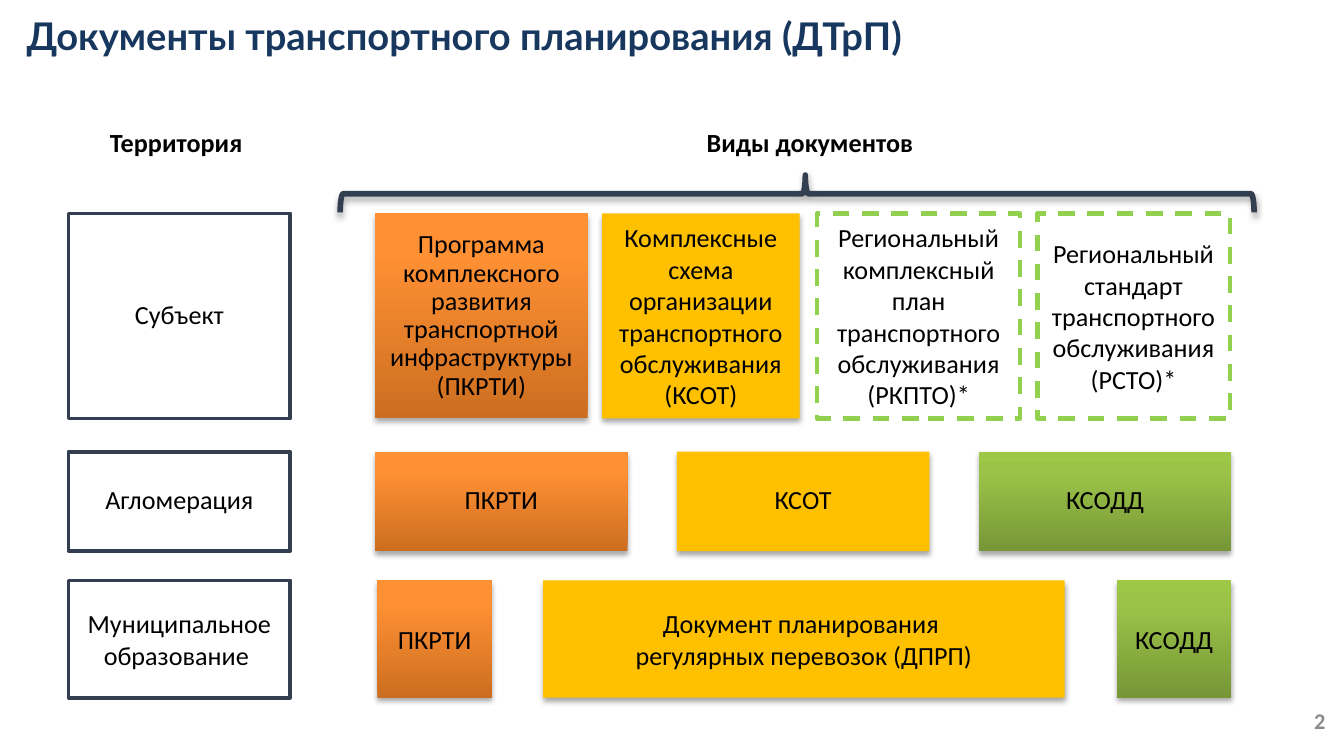
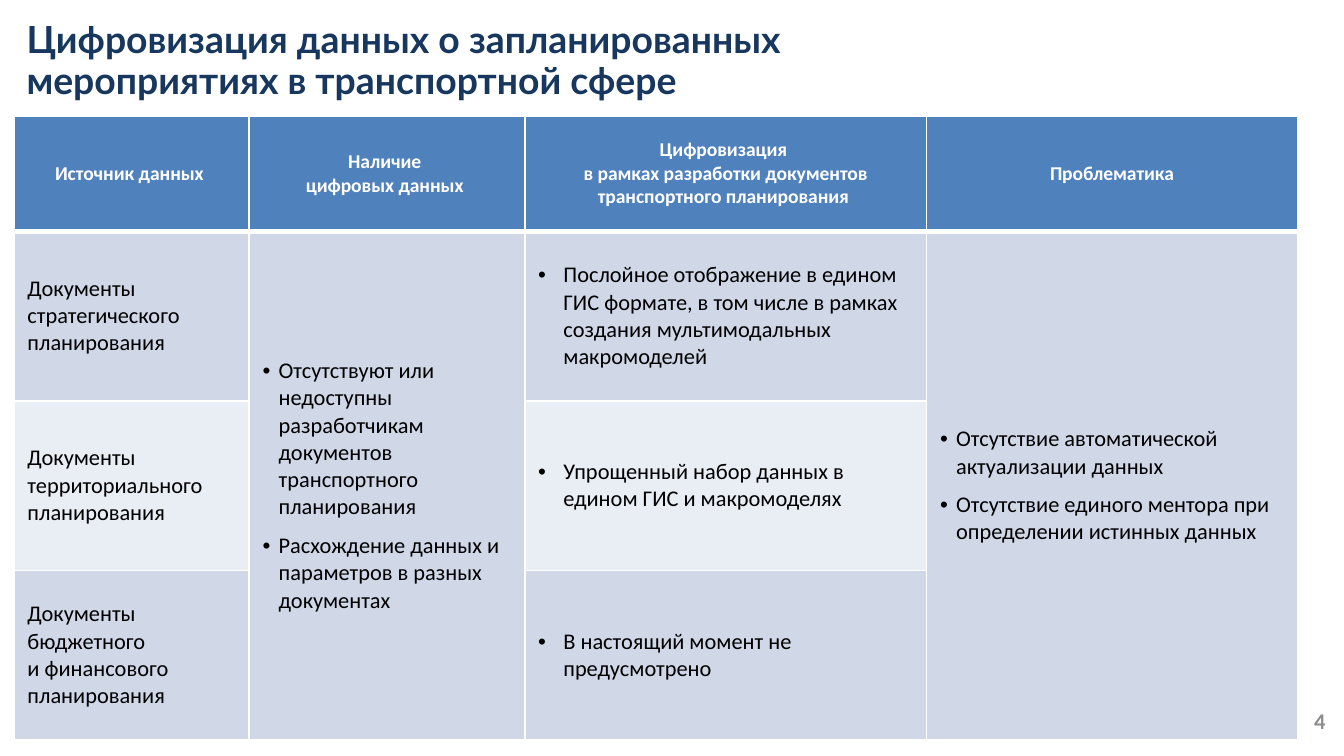
"""Builds two slides on transport planning documents and their digital data."""
from copy import deepcopy
from dataclasses import dataclass
from typing import Optional

from lxml import etree
from pptx import Presentation
from pptx.dml.color import RGBColor
from pptx.enum.dml import MSO_LINE
from pptx.enum.shapes import MSO_SHAPE
from pptx.enum.text import MSO_ANCHOR, PP_ALIGN
from pptx.oxml.ns import qn
from pptx.util import Pt

LEFT, CENTER, RIGHT = PP_ALIGN.LEFT, PP_ALIGN.CENTER, PP_ALIGN.RIGHT
TOP, MIDDLE = MSO_ANCHOR.TOP, MSO_ANCHOR.MIDDLE
RECT, BRACE = MSO_SHAPE.RECTANGLE, MSO_SHAPE.LEFT_BRACE
DASH = MSO_LINE.DASH

BLACK, WHITE, NAVY, SLATE = "000000", "FFFFFF", "17375E", "333F50"
GREY, HEAD, DARK, LIGHT = "8C8C8C", "4F81BD", "D0D8E8", "E9EDF4"
STOPS = (0, 0.8, 1)


@dataclass(frozen=True)
class Style:
    fills: tuple[str, ...]
    line: Optional[str] = None
    width: float = 0
    dash: bool = False
    shadow: bool = False


@dataclass(frozen=True)
class Box:
    text: str
    left: float
    width: float
    style: Style
    spacing: float = 1


@dataclass(frozen=True)
class Row:
    top: float
    height: float
    boxes: tuple[Box, ...]


@dataclass(frozen=True)
class Cell:
    row: int
    col: int
    texts: tuple[str, ...]
    indent: float = 0
    span: int = 1


PLACE = Style((WHITE,), SLATE, 2)
ORANGE = Style(("CC6E20", "FF9034", "FF9136"), shadow=True)
GREEN = Style(("779737", "9BC348", "9DC746"), shadow=True)
YELLOW = Style(("FFC000",), shadow=True)
DRAFT = Style((WHITE,), "92D050", 2.25, dash=True)


def place(text: str, spacing: float = 0.9) -> Box:
    return Box(text, 36.7, 118.8, PLACE, spacing)


MIDDLES = (("ПКРТИ", ORANGE), ("КСОТ", YELLOW), ("КСОДД", GREEN))
ROWS = (
    Row(114.4, 109.8, (
        place("Субъект"),
        Box("Программа комплексного развития транспортной инфраструктуры (ПКРТИ)",
            201, 113.8, ORANGE, 0.9),
        Box("Комплексные схема организации транспортного обслуживания (КСОТ)",
            322.6, 105.8, YELLOW),
        Box("Региональный комплексный план транспортного обслуживания (РКПТО)*",
            437.8, 108.7, DRAFT),
        Box("Региональный стандарт транспортного обслуживания (РСТО)*",
            555.8, 103, DRAFT),
    )),
    Row(242, 53.3, (
        place("Агломерация"),
        *(Box(text, 201 + 161.7 * i, 135.2, style, 0.9)
          for i, (text, style) in enumerate(MIDDLES)),
    )),
    Row(311, 62.8, (
        place("Муниципальное образование ", 1),
        Box("ПКРТИ", 202.2, 61.4, ORANGE),
        Box("Документ планирования \nрегулярных перевозок (ДПРП)", 291, 279.4, YELLOW),
        Box("КСОДД", 598.3, 61.4, GREEN),
    )),
)

COLS = (126, 147.6, 215.3, 198.7)
HEIGHTS = (61.9, 90.9, 90.9, 90.9)
HEADS = (
    "Источник данных ",
    "Наличие \nцифровых данных ",
    "Цифровизация \nв рамках разработки документов транспортного планирования ",
    "Проблематика",
)
CELLS = (
    Cell(1, 0, ("Документы стратегического планирования",)),
    Cell(2, 0, ("Документы территориального планирования",)),
    Cell(3, 0, ("Документы бюджетного \nи финансового планирования",)),
    Cell(1, 1, ("Отсутствуют или недоступны разработчикам документов "
                "транспортного планирования",
                "Расхождение данных и параметров в разных документах"), 8.6, 3),
    Cell(1, 2, ("Послойное отображение в едином ГИС формате, в том числе "
                "в рамках создания мультимодальных макромоделей",), 13.5),
    Cell(2, 2, ("Упрощенный набор данных в едином ГИС и макромоделях",), 13.5),
    Cell(3, 2, ("В настоящий момент не предусмотрено",), 13.5),
    Cell(1, 3, ("Отсутствие автоматической актуализации данных",
                "Отсутствие единого ментора при определении истинных данных"), 8.6, 3),
)


def rgb(code: str) -> RGBColor:
    return RGBColor.from_string(code)


def write(frame, *texts: str, size: float = 14, color: str = BLACK,
          bold: bool = False, font: str = "Calibri", align=LEFT, anchor=TOP,
          spacing: float = 1, indent: float = 0) -> None:
    frame.word_wrap = True
    frame.vertical_anchor = anchor
    for i, text in enumerate(texts):
        para = frame.add_paragraph() if i else frame.paragraphs[0]
        para.text = text
        para.alignment = align
        para.line_spacing = spacing
        if indent:
            para.space_before = Pt(3 if i else 0)
            para.space_after = Pt(3)
            props = para._p.get_or_add_pPr()
            props.set("marL", str(Pt(indent)))
            props.set("indent", str(-Pt(indent)))
            etree.SubElement(props, qn("a:buFont")).set("typeface", "Arial")
            etree.SubElement(props, qn("a:buChar")).set("char", "•")
        for run in para.runs:
            run.font.name = font
            run.font.size = Pt(size)
            run.font.bold = bold
            run.font.color.rgb = rgb(color)
        for gap in para._p.findall(qn("a:br")):
            gap.append(deepcopy(para.runs[0]._r.rPr))


def label(slide, text: str, left: float, top: float, width: float,
          height: float, **look) -> None:
    box = slide.shapes.add_textbox(Pt(left), Pt(top), Pt(width), Pt(height))
    write(box.text_frame, text, **look)


def dress(shape, style: Style) -> None:
    fill = shape.fill
    if len(style.fills) > 1:
        fill.gradient()
        fill.gradient_angle = 90
        stops = shape.element.spPr.find(".//" + qn("a:gsLst"))
        stops.append(deepcopy(stops[0]))
        for stop, at, code in zip(fill.gradient_stops, STOPS, style.fills):
            stop.position = at
            stop.color.rgb = rgb(code)
    elif style.fills:
        fill.solid()
        fill.fore_color.rgb = rgb(style.fills[0])
    else:
        fill.background()
    if style.line:
        shape.line.color.rgb = rgb(style.line)
        shape.line.width = Pt(style.width)
        if style.dash:
            shape.line.dash_style = DASH
    else:
        shape.line.fill.background()
    shape.shadow.inherit = False
    if style.shadow:
        effects = shape.element.spPr.find(qn("a:effectLst"))
        outer = etree.SubElement(
            effects, qn("a:outerShdw"), blurRad=str(Pt(3.1)), dist=str(Pt(1.8)),
            dir="5400000", rotWithShape="0")
        tint = etree.SubElement(outer, qn("a:srgbClr"), val=BLACK)
        etree.SubElement(tint, qn("a:alpha"), val="35000")


def add_box(slide, box: Box, row: Row) -> None:
    shape = slide.shapes.add_shape(
        RECT, Pt(box.left), Pt(row.top), Pt(box.width), Pt(row.height))
    dress(shape, box.style)
    write(shape.text_frame, box.text, align=CENTER, anchor=MIDDLE,
          spacing=box.spacing)


def start(deck, title: str, number: int, size: float, spacing: float):
    slide = deck.slides.add_slide(deck.slide_layouts[5])
    head = slide.shapes.title
    head.left, head.top, head.width, head.height = Pt(7), Pt(8), Pt(530), Pt(38)
    write(head.text_frame, title, size=size, color=NAVY, bold=True, font="Lato",
          spacing=spacing)
    label(slide, str(number), 549.4, 375.4, 167.8, 21.6, size=12, color=GREY,
          bold=True, align=RIGHT, anchor=MIDDLE)
    return slide


def paint(cell, color: str, top: float = 1, bottom: float = 1) -> None:
    cell.fill.solid()
    cell.fill.fore_color.rgb = rgb(color)
    props = cell._tc.get_or_add_tcPr()
    sides = (("L", 1), ("R", 1), ("T", top), ("B", bottom))
    for i, (side, width) in enumerate(sides):
        line = etree.Element(qn("a:ln" + side), w=str(Pt(width)))
        fill = etree.SubElement(line, qn("a:solidFill"))
        etree.SubElement(fill, qn("a:srgbClr"), val=WHITE)
        props.insert(i, line)


def draw_types(deck) -> None:
    slide = start(deck, "Документы транспортного планирования (ДТрП)", 2, 20.4, 0.8)
    label(slide, "Территория", 51.8, 64.1, 94.3, 24.5, bold=True)
    label(slide, "Виды документов", 371.5, 64.1, 152.6, 24.5, bold=True)
    for row in ROWS:
        for box in row.boxes:
            add_box(slide, box, row)
    brace = slide.shapes.add_shape(BRACE, Pt(417), Pt(-141), Pt(20), Pt(489.6))
    brace.rotation = 90
    brace.adjustments[0] = 0.083
    brace.adjustments[1] = 0.491
    dress(brace, Style((), SLATE, 3, shadow=True))


def draw_data(deck) -> None:
    slide = start(deck, "Цифровизация данных о запланированных мероприятиях "
                        "в транспортной сфере", 4, 20, 0.9)
    grid = slide.shapes.add_table(
        len(HEIGHTS), len(COLS), Pt(7.5), Pt(62), Pt(sum(COLS)),
        Pt(sum(HEIGHTS))).table
    for col, width in zip(grid.columns, COLS):
        col.width = Pt(width)
    for row, height in zip(grid.rows, HEIGHTS):
        row.height = Pt(height)
    for i, text in enumerate(HEADS):
        cell = grid.cell(0, i)
        paint(cell, HEAD, bottom=3)
        cell.vertical_anchor = MIDDLE
        write(cell.text_frame, text, size=10.5, color=WHITE, bold=True,
              align=CENTER)
        for j in range(1, len(HEIGHTS)):
            band = LIGHT if j == 2 and i in (0, 2) else DARK
            paint(grid.cell(j, i), band, top=3 if j == 1 else 1)
    for item in CELLS:
        cell = grid.cell(item.row, item.col)
        if item.span > 1:
            cell.merge(grid.cell(item.row + item.span - 1, item.col))
        cell.vertical_anchor = MIDDLE
        write(cell.text_frame, *item.texts, size=12, indent=item.indent)


def main() -> None:
    deck = Presentation()
    deck.slide_width, deck.slide_height = Pt(720), Pt(405)
    draw_types(deck)
    draw_data(deck)
    deck.save("out.pptx")


if __name__ == "__main__":
    main()
